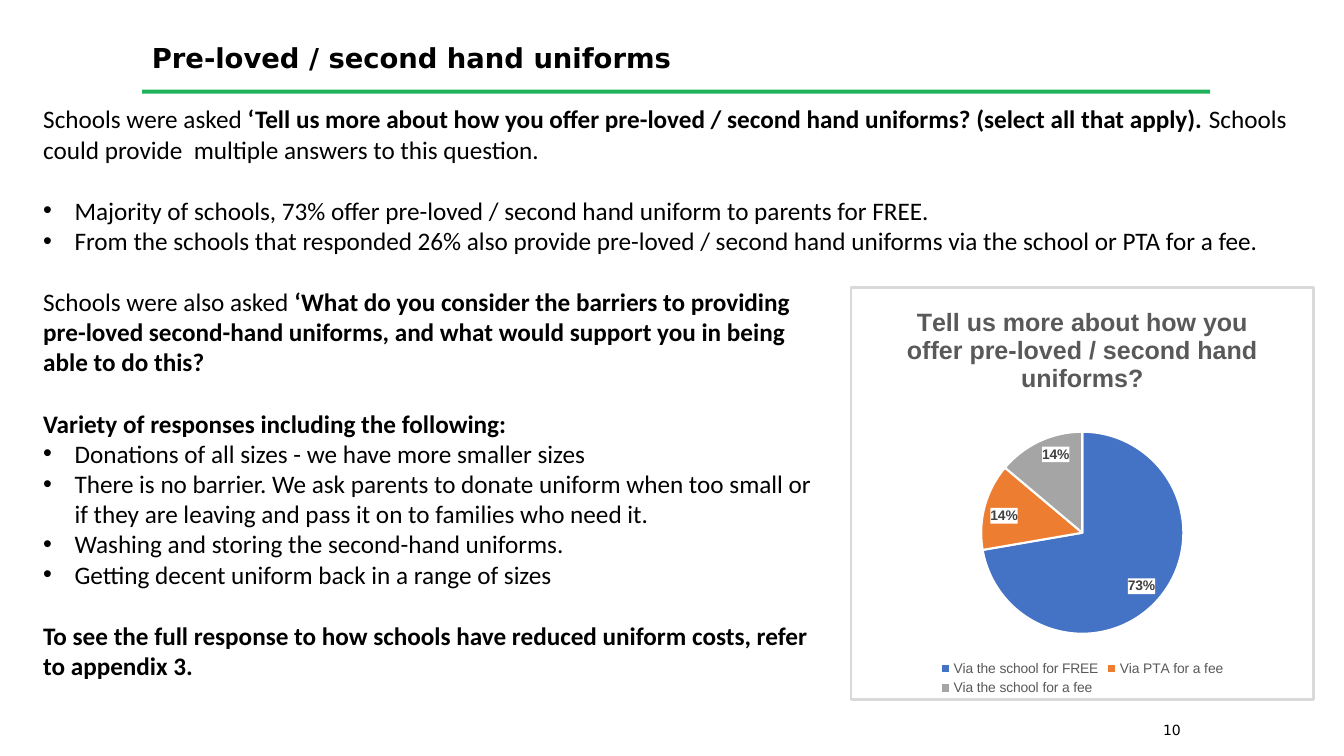
"""Builds the slide on pre-loved and second hand school uniforms."""
from lxml.etree import SubElement
from pptx import Presentation
from pptx.chart.data import CategoryChartData
from pptx.dml.color import RGBColor
from pptx.enum.chart import XL_CHART_TYPE, XL_LABEL_POSITION, XL_LEGEND_POSITION
from pptx.enum.shapes import MSO_SHAPE
from pptx.enum.text import MSO_ANCHOR
from pptx.oxml import parse_xml
from pptx.oxml.ns import nsdecls, qn
from pptx.util import Cm, Pt

BLACK = RGBColor(0x00, 0x00, 0x00)
WHITE = RGBColor(0xFF, 0xFF, 0xFF)
GREEN = RGBColor(0x1F, 0xB2, 0x5A)
GREY_TEXT = RGBColor(0x59, 0x59, 0x59)
LABEL_TEXT = RGBColor(0x40, 0x40, 0x40)
SLICE_COLOURS = [
    RGBColor(0x44, 0x72, 0xC4),
    RGBColor(0xED, 0x7D, 0x31),
    RGBColor(0xA5, 0xA5, 0xA5),
]
LINE_GAP = Pt(22)


def style(font, name, size, colour, bold=False):
    font.name = name
    font.size = Pt(size)
    font.color.rgb = colour
    font.bold = bold


def add_text(left, top, width, height, paragraphs, name="Calibri", size=18):
    frame = slide.shapes.add_textbox(Cm(left), Cm(top), Cm(width), Cm(height)).text_frame
    frame.word_wrap = True
    for index, (bulleted, gap_before, runs) in enumerate(paragraphs):
        paragraph = frame.add_paragraph() if index else frame.paragraphs[0]
        if gap_before:
            paragraph.space_before = LINE_GAP
        if bulleted:
            properties = paragraph._p.get_or_add_pPr()
            properties.set("marL", str(Cm(0.79)))
            properties.set("indent", str(-Cm(0.79)))
            SubElement(properties, qn("a:buFont")).set("typeface", "Arial")
            SubElement(properties, qn("a:buChar")).set("char", "•")
        for text, bold in runs:
            run = paragraph.add_run()
            run.text = text
            style(run.font, name, size, BLACK, bold)
    return frame


presentation = Presentation()
presentation.slide_width = Cm(33.87)
presentation.slide_height = Cm(19.05)
slide = presentation.slides.add_slide(presentation.slide_layouts[6])

heading = add_text(3.58, 0.55, 26.72, 1.8,
                   [(False, False, [("Pre-loved / second hand uniforms", True)])],
                   "DejaVu Sans", 19.6)
heading.vertical_anchor = MSO_ANCHOR.MIDDLE

heading_rule = slide.shapes.add_shape(MSO_SHAPE.RECTANGLE, Cm(3.58), Cm(2.26), Cm(26.92), Cm(0.1))
heading_rule.shadow.inherit = False
heading_rule.fill.solid()
heading_rule.fill.fore_color.rgb = GREEN
heading_rule.line.fill.background()

add_text(29.06, 18.06, 1.32, 0.91, [(False, False, [("10", False)])], "DejaVu Sans", 10)

add_text(0.84, 2.49, 32.41, 4.11, [
    (False, False, [
        ("Schools were asked ", False),
        ("‘Tell us more about how you offer pre-loved / second hand uniforms? "
         "(select all that apply). ", True),
        ("Schools could provide  multiple answers to this question.", False),
    ]),
    (True, True, [("Majority of schools, 73% offer pre-loved / second hand uniform "
                   "to parents for FREE.", False)]),
    (True, False, [("From the schools that responded 26% also provide pre-loved / second hand "
                    "uniforms via the school or PTA for a fee.", False)]),
])

add_text(0.84, 7.09, 19.99, 10.26, [
    (False, False, [
        ("Schools were also asked ", False),
        ("‘What do you consider the barriers to providing pre-loved second-hand uniforms, "
         "and what would support you in being able to do this?", True),
    ]),
    (False, True, [("Variety of responses including the following:", True)]),
    (True, False, [("Donations of all sizes - we have more smaller sizes", False)]),
    (True, False, [("There is no barrier. We ask parents to donate uniform when too small "
                    "or if they are leaving and pass it on to families who need it.", False)]),
    (True, False, [("Washing and storing the second-hand uniforms.", False)]),
    (True, False, [("Getting decent uniform back in a range of sizes", False)]),
    (False, True, [("To see the full response to how schools have reduced uniform costs, "
                    "refer to appendix 3.", True)]),
])

offer_data = CategoryChartData(number_format='0"%"')
offer_data.categories = ["Via the school for FREE", "Via PTA for a fee", "Via the school for a fee"]
offer_data.add_series("Series 1", [73, 14, 14])
offer_chart = slide.shapes.add_chart(
    XL_CHART_TYPE.PIE, Cm(21.41), Cm(7.21), Cm(11.73), Cm(10.46), offer_data).chart
style(offer_chart.font, "Arial", 10, BLACK)

question = offer_chart.chart_title.text_frame.paragraphs[0].add_run()
question.text = "Tell us more about how you offer pre-loved / second hand uniforms?"
style(question.font, "Arial", 18, GREY_TEXT, True)
offer_chart.chart_title.include_in_layout = False

offer_chart.has_legend = True
offer_chart.legend.position = XL_LEGEND_POSITION.BOTTOM
offer_chart.legend.include_in_layout = False
style(offer_chart.legend.font, "Arial", 10, GREY_TEXT)

pie = offer_chart.plots[0]
pie.vary_by_categories = True
for index, colour in enumerate(SLICE_COLOURS):
    slice_format = pie.series[0].points[index].format
    slice_format.fill.solid()
    slice_format.fill.fore_color.rgb = colour
    slice_format.line.color.rgb = WHITE
    slice_format.line.width = Pt(1.5)

shares = pie.series[0].data_labels
shares.show_value = True
shares.number_format = '0"%"'
shares.number_format_is_linked = False
shares.position = XL_LABEL_POSITION.INSIDE_END
style(shares.font, "Arial", 10, LABEL_TEXT, True)

white_fill = f'<a:solidFill><a:srgbClr val="{WHITE}"/></a:solidFill>'
shares._element.find(qn("c:numFmt")).addnext(
    parse_xml(f'<c:spPr {nsdecls("c", "a")}>{white_fill}</c:spPr>'))
chart_space = offer_chart._chartSpace
chart_space.find(qn("c:chart")).addnext(parse_xml(
    f'<c:spPr {nsdecls("c", "a")}>{white_fill}<a:ln w="{Pt(2)}"><a:solidFill>'
    '<a:srgbClr val="D9D9D9"/></a:solidFill></a:ln></c:spPr>'))

plot_area = chart_space.find(qn("c:chart")).find(qn("c:plotArea"))
for automatic_layout in plot_area.findall(qn("c:layout")):
    plot_area.remove(automatic_layout)
plot_area.insert(0, parse_xml(
    f'<c:layout {nsdecls("c")}><c:manualLayout><c:layoutTarget val="inner"/>'
    '<c:xMode val="edge"/><c:yMode val="edge"/><c:x val="0.28"/><c:y val="0.35"/>'
    '<c:w val="0.44"/><c:h val="0.49"/></c:manualLayout></c:layout>'))

presentation.save("out.pptx")
